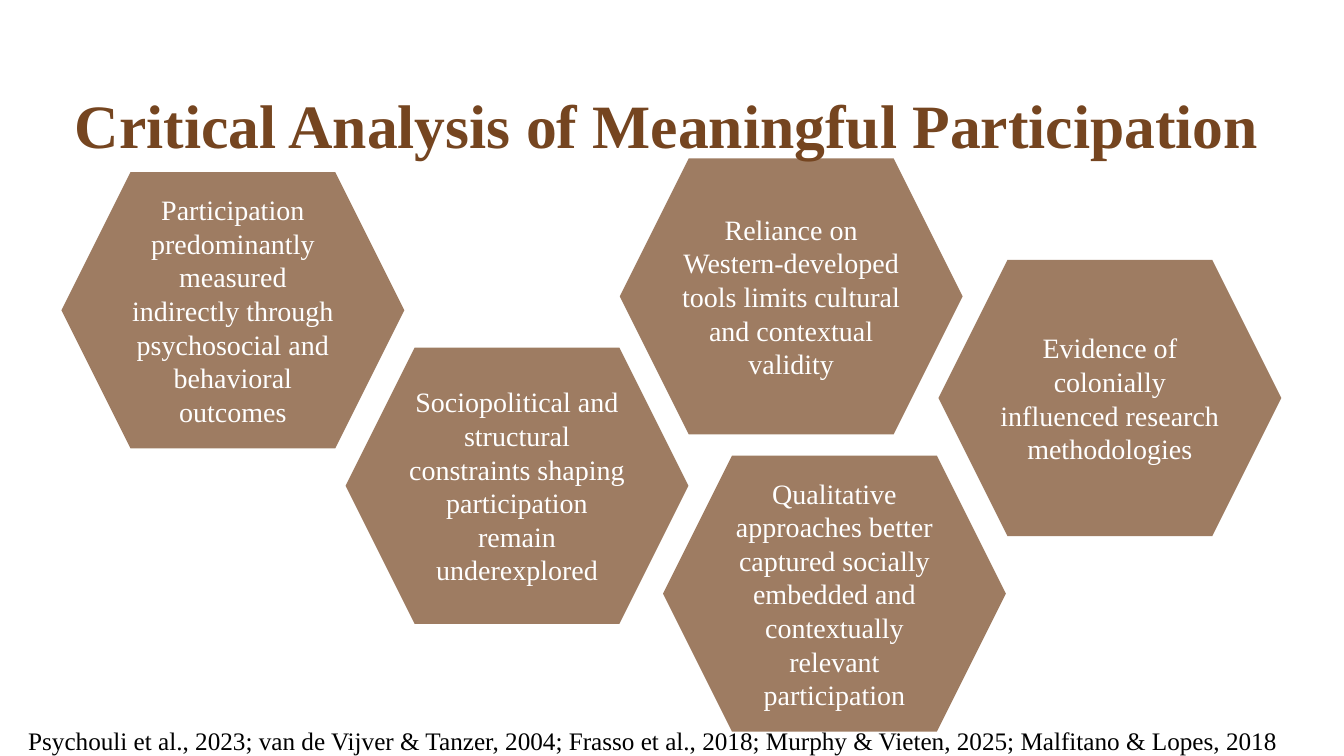
import pptx
import pptx.util
import pptx.dml.color
import pptx.enum.shapes
import pptx.enum.text
import pptx.oxml
import pptx.oxml.ns

Cm, Pt = pptx.util.Cm, pptx.util.Pt
FONT = "Times New Roman"
HUES = {"brown": "754520", "white": "FFFFFF", "black": "000000"}
HEX_W, HEX_H = 8.64, 6.96

# Offset of each hexagon from the corner of its region, in cm
CELLS = [
    (0, 0.35, "Participation predominantly measured indirectly through "
              "psychosocial and behavioral outcomes"),
    (7.16, 4.77, "Sociopolitical and structural constraints shaping "
                 "participation remain underexplored"),
    (15.16, 7.49, "Qualitative approaches better captured socially embedded "
                  "and contextually relevant participation"),
    (22.1, 2.56, "Evidence of colonially influenced research methodologies"),
    (14.07, 0, "Reliance on Western-developed tools limits cultural and "
               "contextual validity"),
]
CITES = ("Psychouli et al., 2023; van de Vijver & Tanzer, 2004; "
         "Frasso et al., 2018; Murphy & Vieten, 2025; "
         "Malfitano & Lopes, 2018")


def hue(name):
    return pptx.dml.color.RGBColor.from_string(HUES[name])


def write(frame, text, size, tint, align="LEFT", bold=False):
    frame.word_wrap = True
    frame.text = text
    para = frame.paragraphs[0]
    para.alignment = getattr(pptx.enum.text.PP_ALIGN, align)
    font = para.font
    font.name, font.size, font.bold = FONT, Pt(size), bold
    font.color.rgb = hue(tint)
    return para


# Title at the top of the slide
def head(slide, x, y, w, h):
    title = slide.shapes.title
    title.left, title.top, title.width, title.height = map(Cm, (x, y, w, h))
    frame = title.text_frame
    para = write(frame, "Critical Analysis of Meaningful Participation",
                 44, "brown", bold=True)
    para.line_spacing = 0.9
    frame.auto_size = pptx.enum.text.MSO_AUTO_SIZE.NONE
    frame.vertical_anchor = pptx.enum.text.MSO_ANCHOR.TOP
    frame.margin_top = Cm(0.3)


# Scattered see-through hexagons
def comb(slide, x, y):
    for dx, dy, text in CELLS:
        cell = slide.shapes.add_shape(
            pptx.enum.shapes.MSO_SHAPE.HEXAGON,
            Cm(x + dx), Cm(y + dy), Cm(HEX_W), Cm(HEX_H))
        cell.shadow.inherit = False
        cell.line.fill.background()
        cell.fill.solid()
        cell.fill.fore_color.rgb = hue("brown")
        tone = cell.fill._xPr.find(".//" + pptx.oxml.ns.qn("a:srgbClr"))
        tone.append(pptx.oxml.parse_xml(
            f'<a:alpha {pptx.oxml.ns.nsdecls("a")} val="70000"/>'))
        write(cell.text_frame, text, 20, "white", "CENTER")
        cell.text_frame.vertical_anchor = pptx.enum.text.MSO_ANCHOR.MIDDLE


# Citations along the lower edge
def foot(slide, x, y, w, h):
    box = slide.shapes.add_textbox(Cm(x), Cm(y), Cm(w), Cm(h))
    write(box.text_frame, CITES, 18, "black")


def main():
    deck = pptx.Presentation()
    deck.slide_width, deck.slide_height = Cm(33.87), Cm(19.05)
    slide = deck.slides.add_slide(deck.slide_layouts[5])
    head(slide, 1.63, 2.11, 31.45, 4.34)
    comb(slide, 1.55, 3.99)
    foot(slide, 0.46, 18.16, 33.73, 1.02)
    deck.save("out.pptx")


if __name__ == "__main__":
    main()
